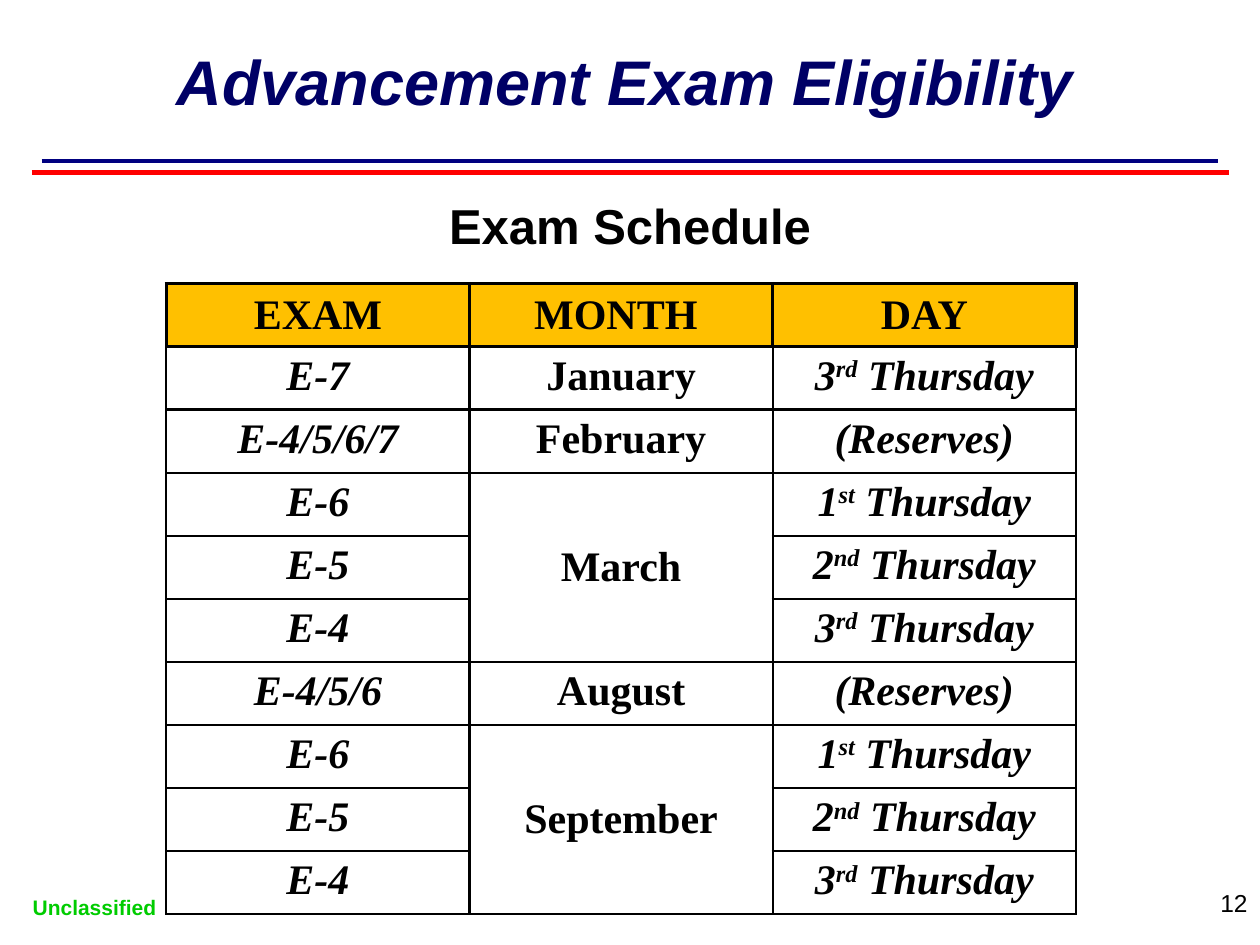
from lxml import etree
from pptx import Presentation
from pptx.dml.color import RGBColor
from pptx.enum.shapes import MSO_CONNECTOR
from pptx.enum.text import MSO_ANCHOR, PP_ALIGN
from pptx.oxml.ns import qn
from pptx.util import Inches, Pt

MID, TOP = MSO_ANCHOR.MIDDLE, MSO_ANCHOR.TOP
MIDDLE, RIGHT = PP_ALIGN.CENTER, PP_ALIGN.RIGHT
LINE = MSO_CONNECTOR.STRAIGHT
HUES = {"navy": "000080", "red": "FF0000", "title": "000066", "black": "000000",
        "green": "00CC00", "gold": "FFC000", "white": "FFFFFF"}
THIN, THICK = 1.5, 2.25

# A tuple holds a day number and its raised ending.
DAYS = {"1": ("1", "st"), "2": ("2", "nd"), "3": ("3", "rd")}
HEAD = ["EXAM", "MONTH ", "DAY"]
ROWS = [
    ["E-7", "January", "3"],
    ["E-4/5/6/7", "February", "(Reserves)"],
    ["E-6", "March", "1"],
    ["E-5", "", "2"],
    ["E-4", "", "3"],
    ["E-4/5/6", "August", "(Reserves)"],
    ["E-6", "September", "1"],
    ["E-5", "", "2"],
    ["E-4", "", "3"],
]
SPANS = [(3, 5), (7, 9)]


def hue(name):
    return RGBColor.from_string(HUES[name])


class Deck:
    """Holds the text style and the current slide."""

    base = {"name": "Arial", "bold": True, "italic": False}

    def __init__(self):
        self.prs = Presentation()
        self.prs.slide_width, self.prs.slide_height = Inches(10), Inches(7.5)
        self.slide = self.prs.slides.add_slide(self.prs.slide_layouts[6])

    def run(self, par, text, size, color="black", **form):
        run = par.add_run()
        run.text = text
        run.font.size = Pt(size)
        run.font.color.rgb = hue(color)
        for key, val in {**self.base, **form}.items():
            setattr(run.font, key, val)
        return run

    def text(self, box, text, size, color="black", align=MIDDLE, anchor=TOP,
             wrap=True, **form):
        shape = self.slide.shapes.add_textbox(*map(Inches, box))
        frame = shape.text_frame
        frame.word_wrap = wrap
        frame.vertical_anchor = anchor
        par = frame.paragraphs[0]
        par.alignment = align
        self.run(par, text, size, color, **form)

    def rule(self, left, right, y, color):
        ends = map(Inches, (left, y, right, y))
        line = self.slide.shapes.add_connector(LINE, *ends)
        line.line.color.rgb = hue(color)
        line.line.width = Pt(2.5)
        etree.SubElement(line._element.spPr, qn("a:effectLst"))

    def edge(self, cell, side, width):
        props = cell._tc.get_or_add_tcPr()
        line = etree.SubElement(props, qn(f"a:ln{side}"), w=str(Pt(width)))
        fill = etree.SubElement(line, qn("a:solidFill"))
        etree.SubElement(fill, qn("a:srgbClr"), val=HUES["black"])

    def cell(self, cell, text, row, col):
        head = row == 0
        for side in "LRTB":
            thick = head or (row == 1 and side == "T")
            self.edge(cell, side, THICK if thick else THIN)
        cell.fill.solid()
        cell.fill.fore_color.rgb = hue("gold" if head else "white")
        if not text:
            return
        cell.vertical_anchor = MID if head or cell.is_merge_origin else TOP
        par = cell.text_frame.paragraphs[0]
        par.alignment = MIDDLE
        form = {"size": 24, "name": "Times New Roman",
                "italic": not head and col != 1}
        if text in DAYS:
            day, end = DAYS[text]
            self.run(par, day, **form)
            mark = self.run(par, end, **form)
            mark._r.get_or_add_rPr().set("baseline", "30000")
            text = " Thursday"
        self.run(par, text, **form)

    def table(self, box, rows, spans):
        frame = self.slide.shapes.add_table(len(rows), len(rows[0]),
                                            *map(Inches, box))
        table = frame.table
        for first, last in spans:
            table.cell(first, 1).merge(table.cell(last, 1))
        for r, row in enumerate(rows):
            for c, text in enumerate(row):
                self.cell(table.cell(r, c), text, r, c)


def main():
    deck = Deck()
    deck.rule(0.33, 9.67, 1.28, "navy")
    deck.rule(0.25, 9.75, 1.37, "red")
    deck.text((0.42, 0.05, 9.22, 1.17), "Advancement Exam Eligibility ", 36,
              "title", anchor=MID, italic=True)
    deck.text((1.66, 1.5, 6.68, 0.62), "Exam Schedule", 28)
    deck.text((0.16, 7.05, 1.18, 0.3), "Unclassified", 12, "green",
              align=RIGHT, wrap=False)
    deck.text((7.92, 7, 2.08, 0.5), "12", 14, align=RIGHT, bold=False)
    deck.table((1.32, 2.25, 7.22, 4.43), [HEAD] + ROWS, SPANS)
    deck.prs.save("out.pptx")


if __name__ == "__main__":
    main()
